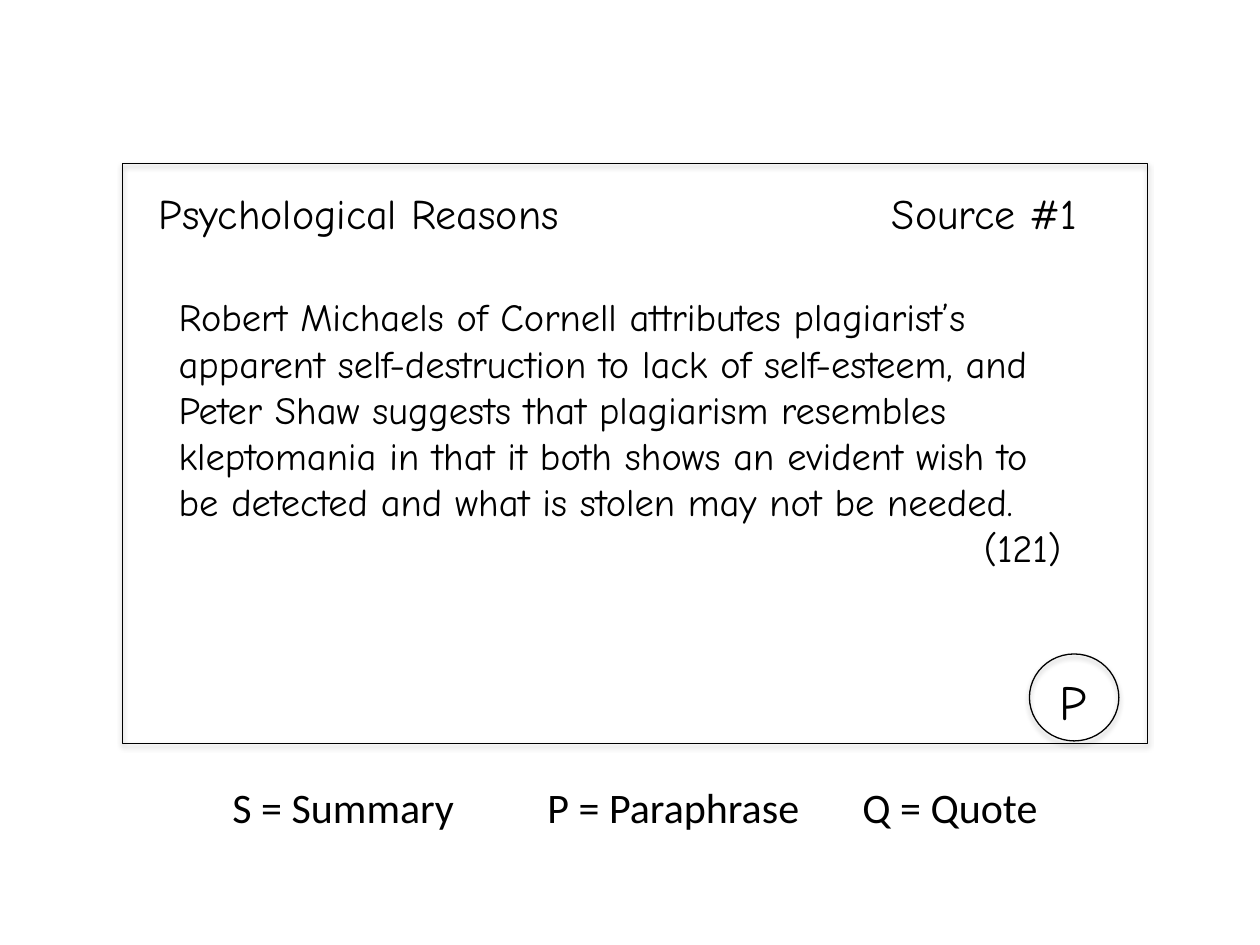
from dataclasses import dataclass

from lxml.etree import SubElement
from pptx import Presentation
from pptx.dml.color import RGBColor
from pptx.enum.shapes import MSO_SHAPE
from pptx.enum.text import MSO_ANCHOR, MSO_AUTO_SIZE, PP_ALIGN
from pptx.oxml.ns import qn
from pptx.util import Inches, Pt


@dataclass(frozen=True)
class Theme:
    ink: RGBColor = RGBColor(0, 0, 0)
    card_font: str = "Comic Neue"
    legend_font: str = "Calibri"
    heading: int = 24
    body: int = 22
    mark: int = 28
    line: float = 0.75


@dataclass(frozen=True)
class Area:
    left: float
    top: float
    width: float
    height: float

    def lengths(self) -> tuple:
        return tuple(map(Inches, (self.left, self.top, self.width, self.height)))


THEME = Theme()
CARD = Area(0.97, 1.3, 8.14, 4.6)
HEADING = Area(1.16, 1.44, 4.72, 0.5)
SOURCE = Area(6.98, 1.44, 1.96, 0.5)
NOTE = Area(1.32, 2.28, 7.2, 2.69)
MARK = Area(8, 5.28, 1.04, 0.57)
RING = Area(8.17, 5.19, 0.71, 0.69)
LEGEND = Area(CARD.left, 6.15, CARD.width, 0.5)

NOTE_TEXT = (
    "Robert Michaels of Cornell attributes plagiarist’s apparent "
    "self-destruction to lack of self-esteem, and Peter Shaw suggests that "
    "plagiarism resembles kleptomania in that it both shows an evident wish "
    "to be detected and what is stolen may not be needed."
)


def add_outline(page, kind: MSO_SHAPE, area: Area) -> None:
    """Draw an unfilled outline with a soft shadow below it."""
    shape = page.shapes.add_shape(kind, *area.lengths())
    shape.fill.background()
    shape.line.color.rgb = THEME.ink
    shape.line.width = Pt(THEME.line)
    shape.shadow.inherit = False
    effects = shape._element.spPr.find(qn("a:effectLst"))
    shadow = SubElement(
        effects, qn("a:outerShdw"), blurRad=str(Pt(3.1)), dist=str(Pt(1.8)),
        dir="5400000", rotWithShape="0",
    )
    color = SubElement(shadow, qn("a:srgbClr"), val=str(THEME.ink))
    SubElement(color, qn("a:alpha"), val="35000")


def write(box, *lines: str, size: int, font: str = THEME.card_font,
          align: PP_ALIGN = PP_ALIGN.LEFT) -> list:
    """Fill a box with one paragraph per line and return the paragraphs."""
    frame = box.text_frame
    frame.word_wrap = True
    frame.auto_size = MSO_AUTO_SIZE.SHAPE_TO_FIT_TEXT
    frame.vertical_anchor = MSO_ANCHOR.TOP
    for index, line in enumerate(lines):
        para = frame.add_paragraph() if index else frame.paragraphs[0]
        para.alignment = align
        span = para.add_run()
        span.text = line
        span.font.name = font
        span.font.size = Pt(size)
        span.font.color.rgb = THEME.ink
    return list(frame.paragraphs)


def add_text(page, area: Area, *lines: str, **style) -> list:
    return write(page.shapes.add_textbox(*area.lengths()), *lines, **style)


def main() -> None:
    deck = Presentation()
    deck.slide_width, deck.slide_height = Inches(10), Inches(7.5)
    page = deck.slides.add_slide(deck.slide_layouts[5])

    # Note card with its heading and source number
    add_outline(page, MSO_SHAPE.RECTANGLE, CARD)
    title = page.shapes.title
    title.left, title.top, title.width, title.height = HEADING.lengths()
    write(title, "Psychological Reasons", size=THEME.heading)
    add_text(page, SOURCE, "Source #1", size=THEME.heading)

    # Paraphrased passage, page number at the right
    paragraphs = add_text(page, NOTE, NOTE_TEXT, "(121)", size=THEME.body)
    paragraphs[-1].alignment = PP_ALIGN.RIGHT

    # Circled note type and the legend for it
    add_text(page, MARK, "P", size=THEME.mark, align=PP_ALIGN.CENTER)
    add_text(page, LEGEND, "S = Summary\t\tP = Paraphrase\t\tQ = Quote",
             size=THEME.heading, font=THEME.legend_font, align=PP_ALIGN.CENTER)
    add_outline(page, MSO_SHAPE.OVAL, RING)

    deck.save("out.pptx")


if __name__ == "__main__":
    main()
